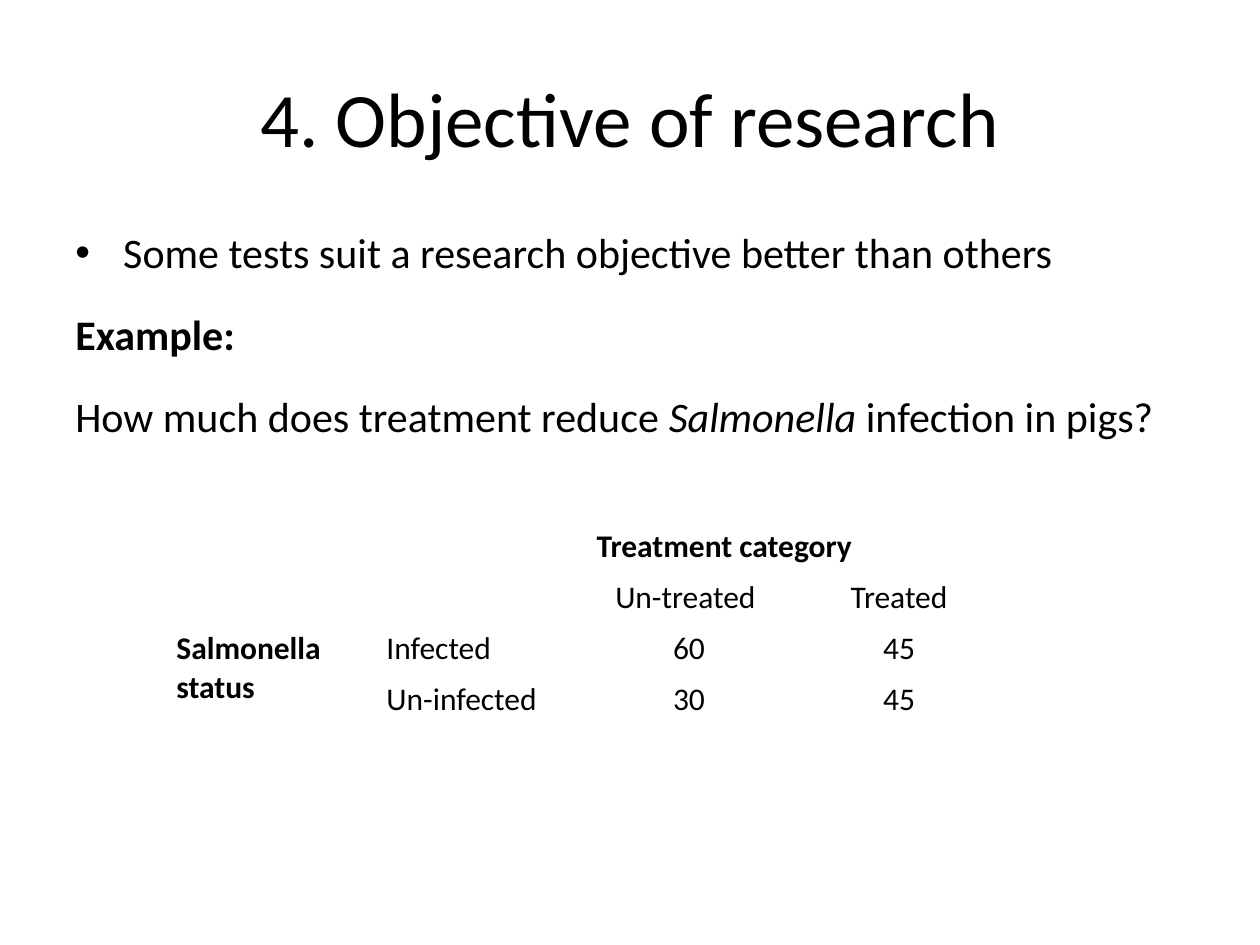
from lxml import etree
from pptx import Presentation
from pptx.dml.color import RGBColor
from pptx.enum.text import MSO_ANCHOR, PP_ALIGN
from pptx.oxml.ns import qn
from pptx.util import Inches, Pt

CENTER, LEFT = PP_ALIGN.CENTER, PP_ALIGN.LEFT
TOP, MIDDLE = MSO_ANCHOR.TOP, MSO_ANCHOR.MIDDLE
FONT = "Calibri"
COLORS = {"text": "000000", "border": "FFFFFF"}

BODY = [
    [("Some tests suit a research objective better than others", {})],
    [("Example:", {"bold": True})],
    [
        ("How much does treatment reduce ", {}),
        ("Salmonella", {"italic": True}),
        (" infection in pigs?", {}),
    ],
]
TABLE_ROWS = [
    ["", "", "Treatment category", ""],
    ["", "", "Un-treated ", "Treated"],
    ["Salmonella status", "Infected", "60", "45"],
    ["", "Un-infected", "30", "45"],
]
BOLD_CELLS = {(0, 2), (2, 0)}


def add_runs(p, runs, size):
    for text, formats in runs:
        r = p.add_run()
        r.text = text
        r.font.color.rgb = RGBColor.from_string(COLORS["text"])
        for name, value in {"name": FONT, "size": Pt(size), **formats}.items():
            setattr(r.font, name, value)


def add_bullet(p):
    pPr = p._p.get_or_add_pPr()
    pPr.set("marL", str(Inches(0.38)))
    pPr.set("indent", str(-Inches(0.38)))
    etree.SubElement(pPr, qn("a:buFont"), typeface="Arial")
    etree.SubElement(pPr, qn("a:buChar"), char="•")


def add_text(slide, box, paragraphs, size, align=LEFT, anchor=TOP):
    tf = slide.shapes.add_textbox(*map(Inches, box)).text_frame
    tf.word_wrap = True
    tf.vertical_anchor = anchor
    for i, runs in enumerate(paragraphs):
        p = tf.add_paragraph() if i else tf.paragraphs[0]
        p.alignment = align
        add_runs(p, runs, size)
    return tf


def set_borders(cell, bottom):
    tcPr = cell._tc.get_or_add_tcPr()
    for side, width in {"L": 1, "R": 1, "T": 1, "B": bottom}.items():
        ln = etree.SubElement(tcPr, qn(f"a:ln{side}"), w=str(Pt(width)))
        fill = etree.SubElement(ln, qn("a:solidFill"))
        etree.SubElement(fill, qn("a:srgbClr"), val=COLORS["border"])


def add_results_table(slide):
    box = map(Inches, (1.3, 4.14, 6.67, 1.62))
    table = slide.shapes.add_table(len(TABLE_ROWS), len(TABLE_ROWS[0]), *box).table
    table.first_row = table.horz_banding = False
    for i, texts in enumerate(TABLE_ROWS):
        for j, text in enumerate(texts):
            cell = table.cell(i, j)
            set_borders(cell, bottom=1 if i else 3)
            cell.fill.background()
            p = cell.text_frame.paragraphs[0]
            p.alignment = CENTER if i and j > 1 else LEFT
            if text:
                add_runs(p, [(text, {"bold": (i, j) in BOLD_CELLS})], 18)
    table.cell(0, 2).merge(table.cell(0, 3))
    table.cell(2, 0).merge(table.cell(3, 0))


def main():
    prs = Presentation()
    prs.slide_width, prs.slide_height = Inches(10), Inches(7.5)
    slide = prs.slides.add_slide(prs.slide_layouts[6])

    title = [[("4. Objective of research", {})]]
    add_text(slide, (0.5, 0.3, 9, 1.25), title, 44, CENTER, MIDDLE)

    body = add_text(slide, (0.5, 1.75, 9, 4.87), BODY, 24)
    add_bullet(body.paragraphs[0])
    for i, p in enumerate(body.paragraphs):
        p.space_before = Pt(6 if i else 0)
        p.space_after = Pt(12)

    add_results_table(slide)
    prs.save("out.pptx")


if __name__ == "__main__":
    main()
